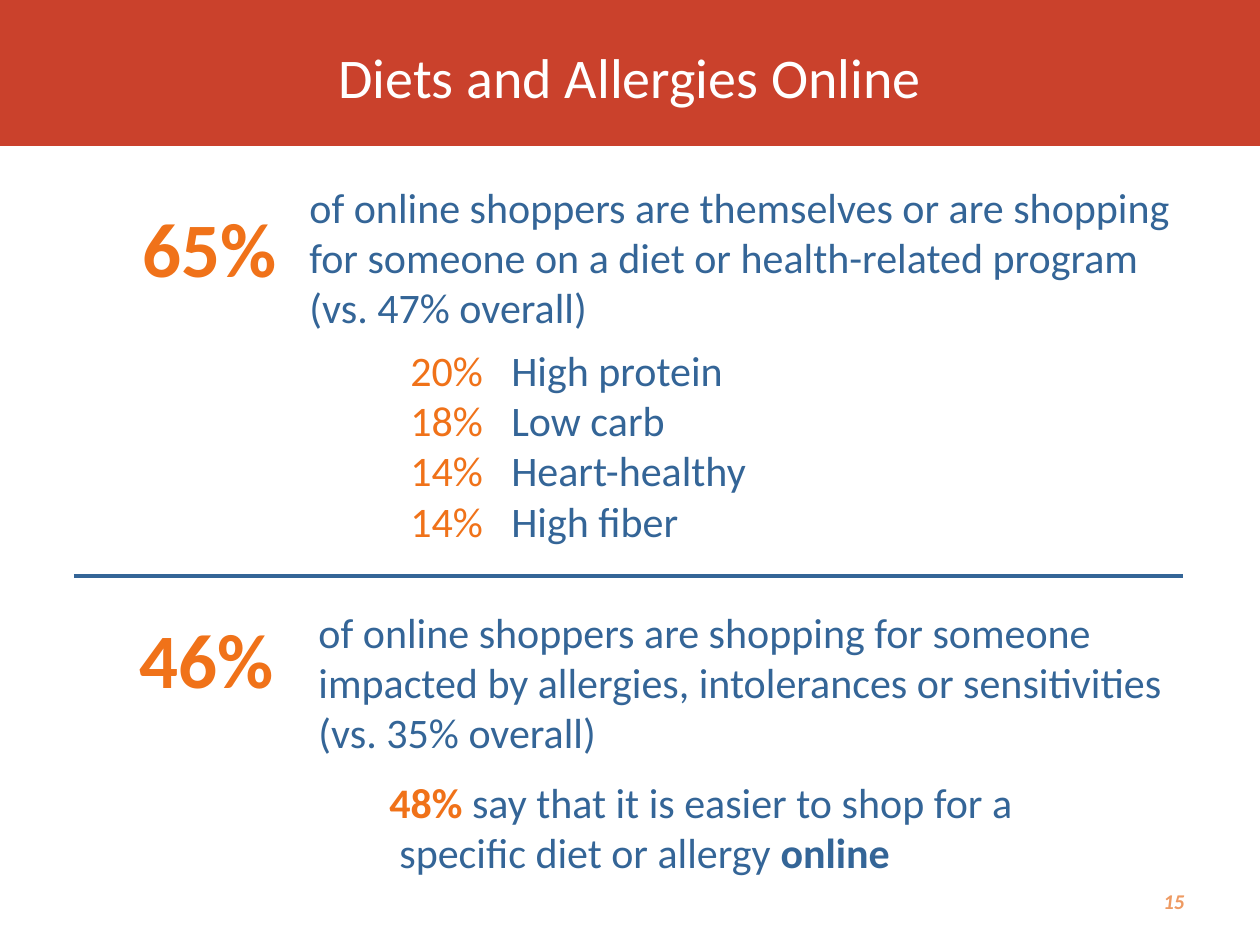
from dataclasses import dataclass
from typing import NamedTuple

from lxml.etree import SubElement as Sub
from pptx import Presentation
from pptx.dml.color import RGBColor as Rgb
from pptx.enum.shapes import MSO_CONNECTOR as Conn, MSO_SHAPE as Kind
from pptx.enum.text import MSO_ANCHOR as Anchor, PP_ALIGN as Align
from pptx.oxml.ns import qn
from pptx.util import Emu, Pt

SCALE = 914400 / 126


def px(num: int) -> Emu:
    return Emu(round(num * SCALE))


@dataclass(frozen=True)
class Theme:
    font: str = "Calibri"
    red: str = "CA412C"
    white: str = "FFFFFF"
    blue: str = "346597"
    gold: str = "F07219"
    peach: str = "EE9A62"
    head: int = 32
    lead: int = 36
    big: int = 44
    body: int = 24
    foot: int = 12
    rule: int = 2


class Area(NamedTuple):
    left: int
    top: int
    width: int
    height: int


class Bit(NamedTuple):
    text: str
    color: str
    bold: bool = False
    slant: bool = False


@dataclass(frozen=True)
class Block:
    area: Area
    lines: list[list[Bit]]
    size: int
    align: Align = Align.LEFT
    anchor: Anchor = Anchor.TOP
    wrap: bool = True
    lead: int = 0
    tab: int = 0
    hang: int = 0


LOOK = Theme()


def color(code: str) -> Rgb:
    return Rgb.from_string(code)


def draw_text(slide, block: Block) -> None:
    frame = slide.shapes.add_textbox(*map(px, block.area)).text_frame
    frame.word_wrap = block.wrap
    frame.vertical_anchor = block.anchor
    for i, line in enumerate(block.lines):
        para = frame.add_paragraph() if i else frame.paragraphs[0]
        para.alignment = block.align
        if block.lead:
            para.line_spacing = Pt(block.lead)
        props = para._p.get_or_add_pPr()
        if block.hang:
            props.set("marL", str(px(block.hang)))
            props.set("indent", str(-px(block.hang)))
        if block.tab:
            stops = Sub(props, qn("a:tabLst"))
            Sub(stops, qn("a:tab"), pos=str(px(block.tab)), algn="l")
        for bit in line:
            run = para.add_run()
            run.text = bit.text
            font = run.font
            font.name = LOOK.font
            font.size = Pt(block.size)
            font.bold = bit.bold
            font.italic = bit.slant
            font.color.rgb = color(bit.color)


def draw_bar(slide, area: Area) -> None:
    bar = slide.shapes.add_shape(Kind.RECTANGLE, *map(px, area))
    bar.shadow.inherit = False
    bar.fill.solid()
    bar.fill.fore_color.rgb = color(LOOK.red)
    bar.line.fill.background()


def draw_rule(slide, left: int, right: int, top: int) -> None:
    rule = slide.shapes.add_connector(
        Conn.STRAIGHT, px(left), px(top), px(right), px(top))
    rule.line.color.rgb = color(LOOK.blue)
    rule.line.width = Pt(LOOK.rule)
    Sub(rule._element.spPr, qn("a:effectLst"))


def blue(text: str, bold: bool = False) -> Bit:
    return Bit(text, LOOK.blue, bold)


def gold(text: str, bold: bool = False) -> Bit:
    return Bit(text, LOOK.gold, bold)


def stat(area: Area, text: str) -> Block:
    return Block(area, [[gold(text, True)]], LOOK.big, wrap=False)


DIETS = [
    ("20%", "High protein"),
    ("18%", "Low carb"),
    ("14%", "Heart-healthy"),
    ("14%", "High fiber"),
]

BLOCKS = [
    Block(Area(0, 0, 1260, 156),
          [[Bit("Diets and Allergies Online", LOOK.white)]],
          LOOK.head, Align.CENTER, Anchor.MIDDLE, lead=LOOK.lead),
    Block(Area(903, 876, 294, 50),
          [[Bit("15", LOOK.peach, True, True)]],
          LOOK.foot, Align.RIGHT, Anchor.MIDDLE),
    stat(Area(130, 194, 161, 106), "65%"),
    Block(Area(297, 175, 900, 165),
          [[blue("of online shoppers are themselves or are shopping for "
                 "someone on a diet or health-related program "
                 "(vs. 47% overall)")]],
          LOOK.body),
    Block(Area(398, 338, 653, 217),
          [[gold(share), blue("\t" + name)] for share, name in DIETS],
          LOOK.body, tab=101),
    stat(Area(127, 605, 171, 106), "46%"),
    Block(Area(306, 600, 900, 165),
          [[blue("of online shoppers are shopping for someone impacted by "
                 "allergies, intolerances or sensitivities")],
           [blue("(vs. 35% overall)")]],
          LOOK.body),
    Block(Area(377, 770, 696, 115),
          [[gold("48% ", True),
            blue("say that it is easier to shop for a specific diet or "
                 "allergy "),
            blue("online", True)]],
          LOOK.body, hang=10),
]


def main() -> None:
    deck = Presentation()
    deck.slide_width, deck.slide_height = px(1260), px(945)
    slide = deck.slides.add_slide(deck.slide_layouts[6])
    draw_bar(slide, Area(0, 0, 1260, 146))
    for block in BLOCKS:
        draw_text(slide, block)
    draw_rule(slide, 74, 1183, 576)
    deck.save("out.pptx")


if __name__ == "__main__":
    main()
